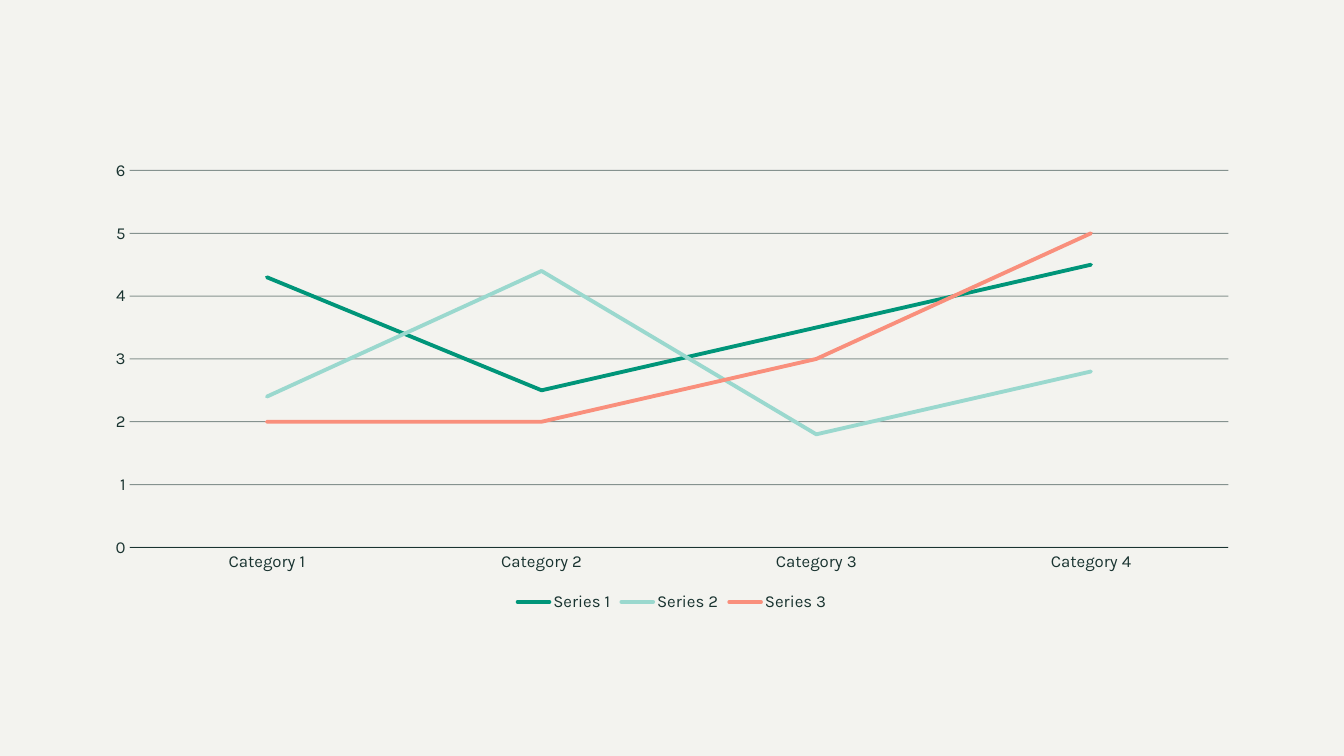
"""Build a slide with a three-series line chart."""
from typing import Any, NamedTuple

from lxml import etree
from pptx import Presentation
from pptx import util as u
from pptx.chart import data as chart_data
from pptx.dml import color
from pptx.enum import chart as ce
from pptx.oxml import ns

FONT = "Karla"
INK = "193330"
PAPER = "F3F3EF"
CATEGORIES = [f"Category {number}" for number in range(1, 5)]


class Trend(NamedTuple):
    """One series with its values and line colour."""

    name: str
    values: tuple[float, ...]
    tint: str


TRENDS = [
    Trend("Series 1", (4.3, 2.5, 3.5, 4.5), "009579"),
    Trend("Series 2", (2.4, 4.4, 1.8, 2.8), "9AD8CE"),
    Trend("Series 3", (2, 2, 3, 5), "F98F7C"),
]


def rgb(value: str) -> color.RGBColor:
    """Turn a hex string into a colour."""
    return color.RGBColor.from_string(value)


def apply(target: Any, **values: Any) -> None:
    """Set each named attribute on the target."""
    for name, value in values.items():
        setattr(target, name, value)


def style_font(font: Any) -> None:
    """Give chart text its face, size and colour."""
    apply(font, name=FONT, size=u.Pt(12), bold=False)
    font.color.rgb = rgb(INK)


def style_line(line: Any, tint: str, width: float) -> None:
    """Give a line its colour and width."""
    line.color.rgb = rgb(tint)
    line.width = u.Pt(width)


def style_axes(chart: Any) -> None:
    """Format both axes and the half-transparent gridlines."""
    category_axis, value_axis = chart.category_axis, chart.value_axis
    for axis in (category_axis, value_axis):
        apply(axis, major_tick_mark=ce.XL_TICK_MARK.NONE,
              minor_tick_mark=ce.XL_TICK_MARK.NONE)
        style_font(axis.tick_labels.font)
    style_line(category_axis.format.line, INK, 0.75)
    apply(value_axis, minimum_scale=0, maximum_scale=6, major_unit=1,
          has_major_gridlines=True)
    apply(value_axis.tick_labels, number_format="General",
          number_format_is_linked=False)
    value_axis.format.line.fill.background()
    gridlines = value_axis.major_gridlines.format.line
    style_line(gridlines, INK, 0.75)
    grid_color = value_axis.major_gridlines._xAx.find(
        f"{ns.qn('c:majorGridlines')}//{ns.qn('a:srgbClr')}")
    etree.SubElement(grid_color, ns.qn("a:alpha"), val="50000")


def style_trends(chart: Any) -> None:
    """Draw each series as a plain line with round ends."""
    for series, trend in zip(chart.plots[0].series, TRENDS):
        series.smooth = False
        series.marker.style = ce.XL_MARKER_STYLE.NONE
        style_line(series.format.line, trend.tint, 2.75)
        series._element.find(f"{ns.qn('c:spPr')}/{ns.qn('a:ln')}").set("cap", "rnd")


def add_trend_chart(slide: Any) -> None:
    """Place the line chart with its legend below."""
    figures = chart_data.CategoryChartData()
    figures.categories = CATEGORIES
    for trend in TRENDS:
        figures.add_series(trend.name, trend.values)
    chart = slide.shapes.add_chart(
        ce.XL_CHART_TYPE.LINE, u.Pt(66), u.Pt(108), u.Pt(828), u.Pt(332), figures
    ).chart
    apply(chart, has_title=False, has_legend=True)
    style_font(chart.font)
    apply(chart.legend, position=ce.XL_LEGEND_POSITION.BOTTOM, include_in_layout=False)
    style_font(chart.legend.font)
    chart.plots[0].vary_by_categories = False
    style_axes(chart)
    style_trends(chart)


def main() -> None:
    """Create and save the slide."""
    deck = Presentation()
    apply(deck, slide_width=u.Pt(960), slide_height=u.Pt(540))
    slide = deck.slides.add_slide(deck.slide_layouts[6])
    slide.background.fill.solid()
    slide.background.fill.fore_color.rgb = rgb(PAPER)
    add_trend_chart(slide)
    deck.save("out.pptx")


if __name__ == "__main__":
    main()
